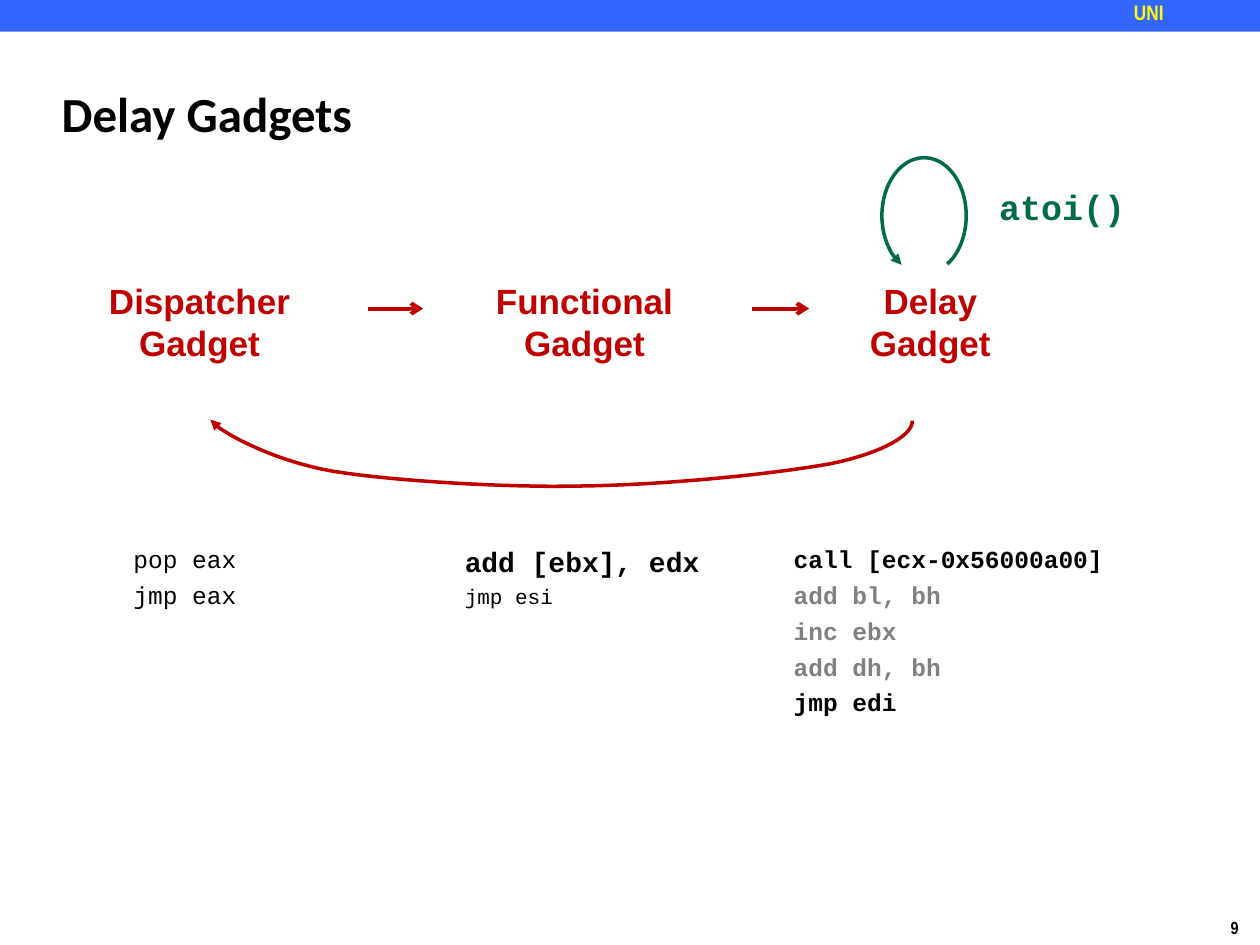
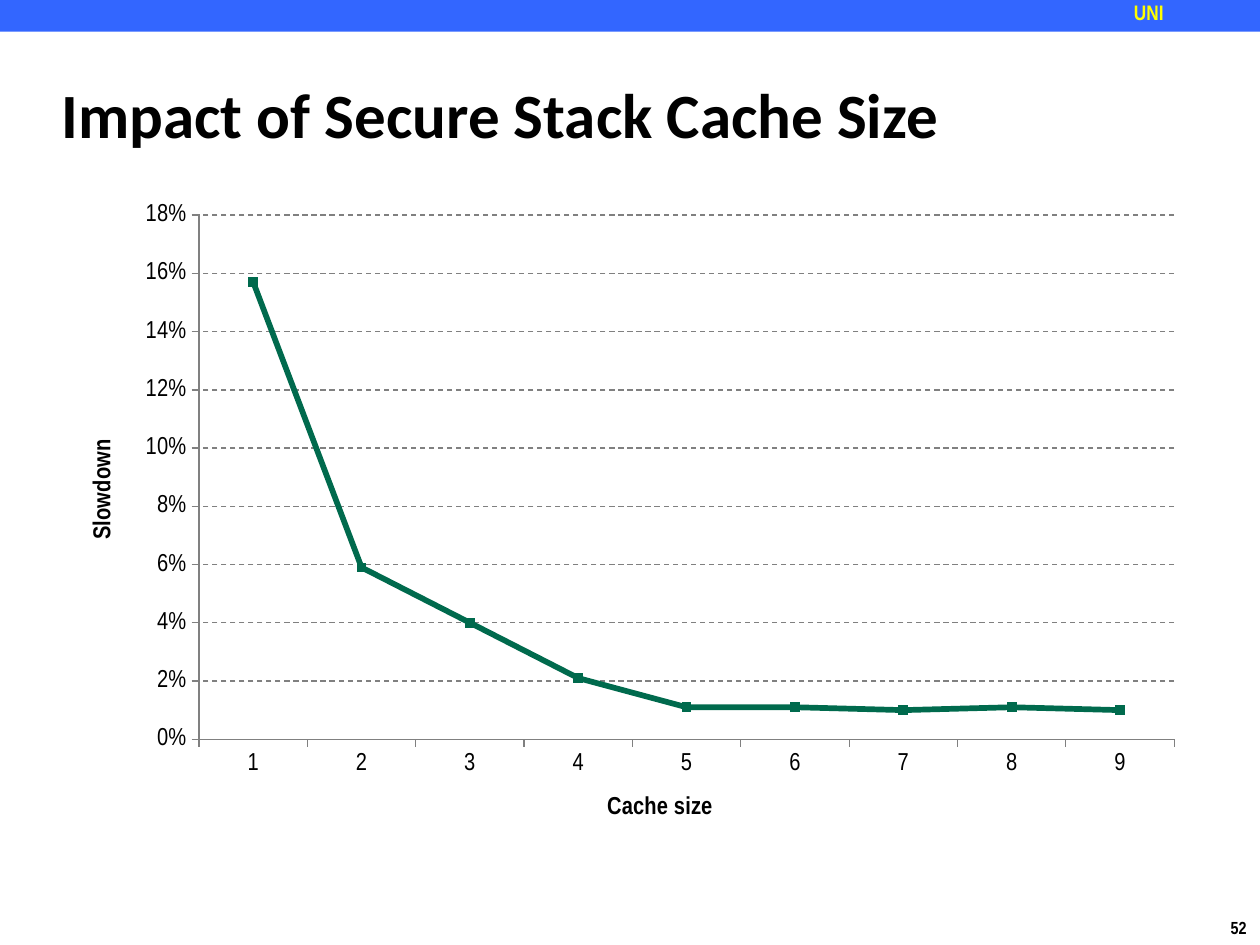
from lxml import etree
from pptx import Presentation
from pptx.chart.data import CategoryChartData
from pptx.dml.color import RGBColor
from pptx.enum.chart import XL_CHART_TYPE, XL_MARKER_STYLE, XL_TICK_MARK
from pptx.enum.dml import MSO_LINE
from pptx.enum.shapes import MSO_CONNECTOR, MSO_SHAPE
from pptx.enum.text import MSO_ANCHOR, MSO_AUTO_SIZE, PP_ALIGN
from pptx.oxml.ns import qn
from pptx.util import Cm, Pt

RECTANGLE, ARC = MSO_SHAPE.RECTANGLE, MSO_SHAPE.ARC
STRAIGHT = MSO_CONNECTOR.STRAIGHT
LEFT, CENTER = PP_ALIGN.LEFT, PP_ALIGN.CENTER
TOP, MIDDLE = MSO_ANCHOR.TOP, MSO_ANCHOR.MIDDLE
NO_AUTO_SIZE = MSO_AUTO_SIZE.NONE
LINE_MARKERS = XL_CHART_TYPE.LINE_MARKERS
SQUARE, TICK_OUTSIDE = XL_MARKER_STYLE.SQUARE, XL_TICK_MARK.OUTSIDE
DASH = MSO_LINE.DASH

BLACK, WHITE, GREY = "000000", "FFFFFF", "808080"
BLUE, YELLOW, RED, GREEN = "3366FF", "FFFF00", "C00000", "006A4D"
NARROW, CODE_FONT = "Arial Narrow", "Courier New"

BAND = (0, 0, 25.4, 0.64)
BAND_LABEL = ("UNI", (22.86, 0, 2.54, 0.56))
NUMBER_FRAME = (24.56, 18.36, 0.86, 0.69)
TITLE_FRAME = (0.99, 1.22, 21.08, 2.11)

LABEL_STYLE = {"name": "Arial", "size": 20, "bold": True, "color": RED}
CODE_STYLE = {"name": CODE_FONT, "size": 14, "bold": False, "color": BLACK}
BOLD_CODE = CODE_STYLE | {"bold": True}
GREY_CODE = BOLD_CODE | {"color": GREY}
BAND_STYLE = {"name": NARROW, "size": 12, "bold": True, "color": YELLOW}
NUMBER_STYLE = BAND_STYLE | {"size": 10, "color": BLACK}

GADGET_TOP, GADGET_HEIGHT = 5.51, 1.96
GADGETS = [("Dispatcher", 1.27, 5.51), ("Functional", 9.12, 5.33), ("Delay", 16.81, 3.89)]
STEP_Y = 6.22
STEP_ARROWS = [(7.42, 8.53), (15.16, 16.31)]
RETURN_START = (4.24, 8.46)
RETURN_CURVES = [
    ((4.29, 8.61), (5.38, 9.27), (6.71, 9.5)),
    ((7.92, 9.7), (10.24, 9.83), (11.63, 9.8)),
    ((13.46, 9.78), (15.62, 9.55), (16.74, 9.35)),
    ((17.86, 9.12), (18.42, 8.74), (18.39, 8.48)),
]
LOOP_FRAME, LOOP_ANGLES = (17.78, 3.18, 1.7, 2.34), (114.6, 64.46)
CODE_BLOCKS = [
    ((2.44, 10.85, 3.18, 2.29), WHITE, [("pop eax", CODE_STYLE), ("jmp eax", CODE_STYLE)]),
    ((9.12, 10.85, 5.4, 2.29), WHITE,
     [("add [ebx], edx", BOLD_CODE | {"size": 16}), ("jmp esi", CODE_STYLE | {"size": 12})]),
    ((15.75, 10.85, 7.98, 4.88), None,
     [("call [ecx-0x56000a00]", BOLD_CODE), ("add bl, bh", GREY_CODE), ("inc ebx", GREY_CODE),
      ("add dh, bh", GREY_CODE), ("jmp edi", BOLD_CODE)]),
    ((19.89, 3.61, 4.24, 1.47), WHITE, [("atoi()", BOLD_CODE | {"size": 20, "color": GREEN})]),
]
CODE_SPACING = 0.26

CHART_FRAME = (1.27, 3.81, 22.86, 13.21)
PLOT_LAYOUT = {"x": 0.12, "y": 0.04, "w": 0.86, "h": 0.8}
CACHE_SIZES = [str(size) for size in range(1, 10)]
SLOWDOWNS = [0.157, 0.059, 0.04, 0.021, 0.011, 0.011, 0.01, 0.011, 0.01]


def rgb(value):
    """Turn a hex string into a colour."""
    return RGBColor.from_string(value)


def lengths(frame):
    """Convert centimetres to lengths."""
    return [Cm(value) for value in frame]


def format_font(font, style):
    """Apply a dict of font values."""
    for name, value in style.items():
        if name == "color":
            font.color.rgb = rgb(value)
        else:
            setattr(font, name, Pt(value) if name == "size" else value)


def add_box(slide, frame, fill=None):
    """Add a text box, or a plain rectangle when a fill is given."""
    if fill is None:
        return slide.shapes.add_textbox(*lengths(frame))
    box = slide.shapes.add_shape(RECTANGLE, *lengths(frame))
    box.shadow.inherit = False
    box.fill.solid()
    box.fill.fore_color.rgb = rgb(fill)
    box.line.fill.background()
    return box


def write(box, lines, align=LEFT, anchor=TOP, spacing=0, wrap=True):
    """Write styled lines, one paragraph each."""
    frame = box.text_frame
    settings = {"word_wrap": wrap, "auto_size": NO_AUTO_SIZE, "vertical_anchor": anchor}
    for name, value in settings.items():
        setattr(frame, name, value)
    for index, (text, style) in enumerate(lines):
        para = frame.add_paragraph() if index else frame.paragraphs[0]
        para.alignment = align
        if spacing:
            para.space_before = Pt(round(style["size"] * spacing, 1))
        span = para.add_run()
        span.text = text
        format_font(span.font, style)


def format_line(line, color, width):
    """Set the colour and width of a line."""
    line.color.rgb = rgb(color)
    line.width = Pt(width)


def add_arrowhead(shape, end, kind):
    """Put an arrowhead on one end of a drawn line."""
    outline = shape.element.spPr.find(qn("a:ln"))
    etree.SubElement(outline, qn(f"a:{end}"), type=kind)


def add_page(deck, title, size, number):
    """Add a page with the shared band, title and number."""
    page = deck.slides.add_slide(deck.slide_layouts[5])
    heading = page.shapes.title
    for name, value in zip(("left", "top", "width", "height"), lengths(TITLE_FRAME)):
        setattr(heading, name, value)
    title_style = {"name": "Calibri", "size": size, "bold": True, "color": BLACK}
    write(heading, [(title, title_style)], anchor=MIDDLE)
    add_box(page, BAND, BLUE)
    text, frame = BAND_LABEL
    label = add_box(page, frame)
    for side in ("left", "top", "right", "bottom"):
        setattr(label.text_frame, f"margin_{side}", 0)
    write(label, [(text, BAND_STYLE)])
    write(add_box(page, NUMBER_FRAME), [(str(number), NUMBER_STYLE)], wrap=False)
    return page


def add_step_arrow(page, start, end):
    """Add a straight arrow between two gadgets."""
    arrow = page.shapes.add_connector(STRAIGHT, *lengths((start, STEP_Y, end, STEP_Y)))
    format_line(arrow.line, RED, 2.25)
    add_arrowhead(arrow, "tailEnd", "arrow")
    etree.SubElement(arrow.element.spPr, qn("a:effectLst"))


def curve_points(start, curves, steps=16):
    """Sample a chain of cubic curves."""
    points = []
    for first, second, end in curves:
        for step in range(1, steps + 1):
            t = step / steps
            weights = ((1 - t) ** 3, 3 * t * (1 - t) ** 2, 3 * t * t * (1 - t), t ** 3)
            corners = (start, first, second, end)
            points.append(tuple(
                Cm(sum(weight * corner[axis] for weight, corner in zip(weights, corners)))
                for axis in (0, 1)))
        start = end
    return points


def add_curved_arrows(page):
    """Add the return path and the loop over the delay gadget."""
    builder = page.shapes.build_freeform(*lengths(RETURN_START))
    builder.add_line_segments(curve_points(RETURN_START, RETURN_CURVES), close=False)
    return_path = builder.convert_to_shape()
    loop = page.shapes.add_shape(ARC, *lengths(LOOP_FRAME))
    for index, angle in enumerate(LOOP_ANGLES):
        loop.adjustments[index] = angle * 0.6
    for shape, color in ((return_path, RED), (loop, GREEN)):
        shape.shadow.inherit = False
        shape.fill.background()
        format_line(shape.line, color, 2)
        add_arrowhead(shape, "headEnd", "triangle")


def build_gadgets(deck):
    """Build the gadget diagram page."""
    page = add_page(deck, "Delay Gadgets", 28, 9)
    for name, left, width in GADGETS:
        box = add_box(page, (left, GADGET_TOP, width, GADGET_HEIGHT))
        write(box, [(name, LABEL_STYLE), ("Gadget", LABEL_STYLE)], CENTER)
    for start, end in STEP_ARROWS:
        add_step_arrow(page, start, end)
    for frame, fill, lines in CODE_BLOCKS:
        write(add_box(page, frame, fill), lines, spacing=CODE_SPACING)
    add_curved_arrows(page)


def format_axis(axis, title):
    """Style one chart axis and its title."""
    style = {"name": NARROW, "size": 14, "bold": False, "color": BLACK}
    format_font(axis.tick_labels.font, style)
    axis.major_tick_mark = TICK_OUTSIDE
    format_line(axis.format.line, GREY, 0.75)
    para = axis.axis_title.text_frame.paragraphs[0]
    span = para.add_run()
    span.text = title
    format_font(span.font, style | {"bold": True})


def set_plot_layout(chart):
    """Fix the inner plot area within the chart."""
    plot_area = chart.element.find(f".//{qn('c:plotArea')}")
    layout = plot_area.find(qn("c:layout"))
    if layout is None:
        layout = etree.Element(qn("c:layout"))
        plot_area.insert(0, layout)
    manual = etree.SubElement(layout, qn("c:manualLayout"))
    values = {"layoutTarget": "inner", "xMode": "edge", "yMode": "edge"} | PLOT_LAYOUT
    for name, value in values.items():
        etree.SubElement(manual, qn(f"c:{name}"), val=str(value))


def build_chart(deck):
    """Build the cache size chart page."""
    page = add_page(deck, "Impact of Secure Stack Cache Size", 36, 52)
    data = CategoryChartData(number_format="0%")
    data.categories = CACHE_SIZES
    data.add_series("Slowdown", SLOWDOWNS)
    chart = page.shapes.add_chart(LINE_MARKERS, *lengths(CHART_FRAME), data).chart
    chart.has_legend = chart.has_title = False
    format_font(chart.font, {"name": NARROW, "size": 10, "color": BLACK})
    chart.plots[0].vary_by_categories = False
    format_axis(chart.category_axis, "Cache size")
    axis = chart.value_axis
    format_axis(axis, "Slowdown")
    for name, value in {"minimum_scale": 0, "maximum_scale": 0.18, "major_unit": 0.02}.items():
        setattr(axis, name, value)
    axis.tick_labels.number_format = "0%"
    axis.tick_labels.number_format_is_linked = False
    grid = axis.major_gridlines.format.line
    format_line(grid, GREY, 0.75)
    grid.dash_style = DASH
    series = chart.plots[0].series[0]
    series.smooth = False
    format_line(series.format.line, GREEN, 3.25)
    marker = series.marker
    marker.style, marker.size = SQUARE, 5
    marker.format.fill.solid()
    marker.format.fill.fore_color.rgb = rgb(GREEN)
    format_line(marker.format.line, GREEN, 0.75)
    set_plot_layout(chart)


def main():
    """Build and save the deck."""
    deck = Presentation()
    deck.slide_width, deck.slide_height = Cm(25.4), Cm(19.05)
    build_gadgets(deck)
    build_chart(deck)
    deck.save("out.pptx")


if __name__ == "__main__":
    main()
